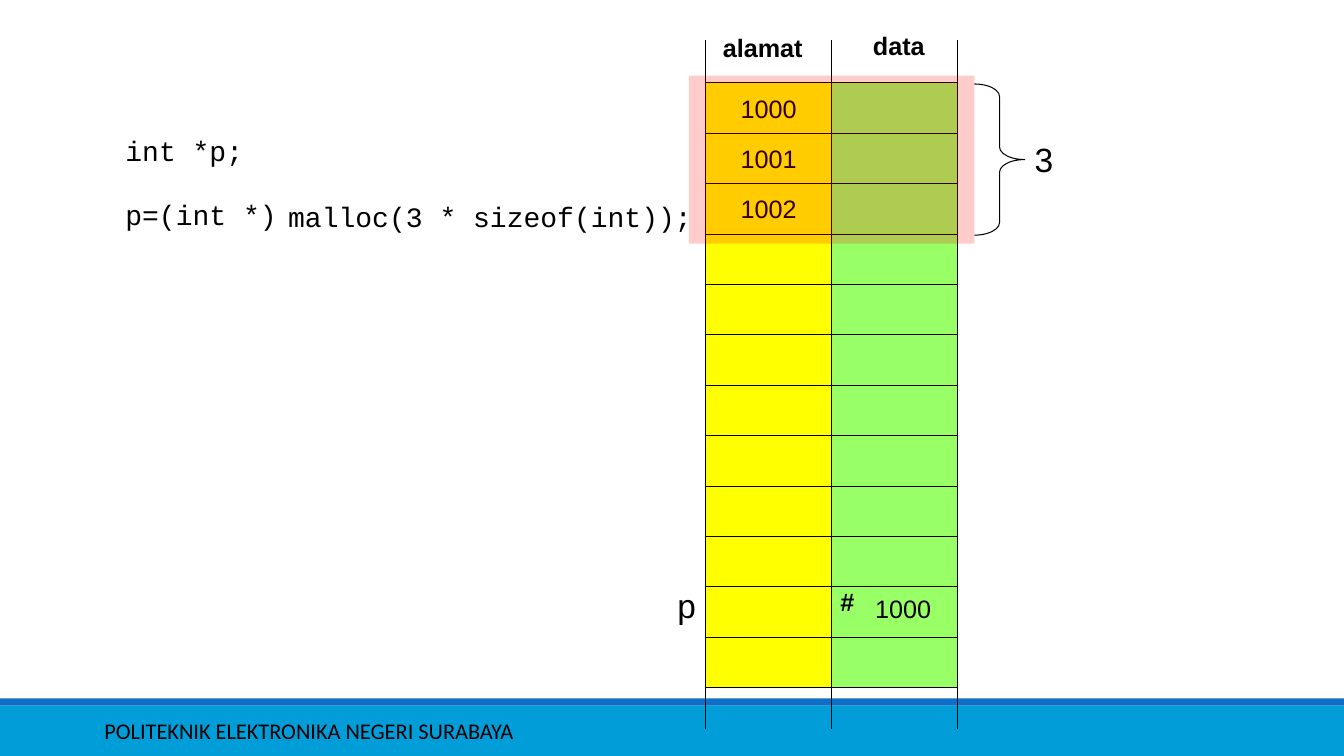
from dataclasses import dataclass

from lxml import etree
from pptx import Presentation
from pptx.dml.color import RGBColor
from pptx.enum.shapes import MSO_CONNECTOR as Connector, MSO_SHAPE as Shape
from pptx.enum.text import MSO_ANCHOR as Anchor, PP_ALIGN as Align
from pptx.oxml.ns import qn
from pptx.util import Emu, Pt


@dataclass(frozen=True)
class Theme:
    ink: str = "000000"
    address: str = "FFFF00"
    data: str = "99FF66"
    highlight: str = "FF0000"
    footer: str = "009DD9"
    stripe: str = "0F6FC6"
    sans: str = "Arial"
    mono: str = "Courier New"
    footer_font: str = "Calibri"
    footer_size: int = 16
    cell_size: int = 18
    code_size: int = 20
    label_size: int = 24
    line: float = 0.75


THEME = Theme()

# Content: memory addresses and text labels (text, box, font, size, bold)
ADDRESSES = ["1000", "1001", "1002"] + [""] * 9
FOOTER = "POLITEKNIK ELEKTRONIKA NEGERI SURABAYA"
HEADINGS = [
    ("alamat", (679, 26, 95, 38), THEME.sans, THEME.cell_size, True),
    ("data", (822, 24, 69, 38), THEME.sans, THEME.cell_size, True),
]
CODE_LABELS = [
    ("int *p;", (110, 122, 132, 42), THEME.mono, THEME.code_size, False),
    ("p", (635, 552, 38, 48), THEME.mono, THEME.label_size, False),
    ("#", (791, 554, 33, 38), THEME.sans, THEME.cell_size, True),
    ("malloc(3 * sizeof(int));", (265, 185, 407, 42), THEME.mono, THEME.code_size, False),
    ("3", (976, 128, 37, 48), THEME.sans, THEME.label_size, False),
]
FRONT_LABELS = [
    ("p=(int *)", (110, 183, 165, 42), THEME.mono, THEME.code_size, False),
    ("1000", (824, 560, 73, 38), THEME.sans, THEME.cell_size, False),
]

# Layout in px, 96 to the inch
PX = 9525
WIDTH, HEIGHT = 1280, 720
MEMORY_LEFT, MEMORY_TOP = 672, 79
COLUMN, ROW = 120, 48
RULE_TOPS = (38, 646)


def px(*lengths):
    return [Emu(length * PX) for length in lengths]


def color(value):
    return RGBColor.from_string(value)


def outline(line):
    line.color.rgb = color(THEME.ink)
    line.width = Pt(THEME.line)


def add_block(kind, box, fill=None, lined=False):
    shape = slide.shapes.add_shape(kind, *px(*box))
    shape.shadow.inherit = False
    if fill:
        shape.fill.solid()
        shape.fill.fore_color.rgb = color(fill)
    else:
        shape.fill.background()
    if lined:
        outline(shape.line)
    else:
        shape.line.fill.background()
    return shape


def write(shape, text, font, size, bold=False, wrap=False):
    frame = shape.text_frame
    frame.word_wrap = wrap
    frame.text = text
    style = frame.paragraphs[0].runs[0].font
    style.name, style.size, style.bold = font, Pt(size), bold
    style.color.rgb = color(THEME.ink)
    return frame


def add_label(text, box, font, size, bold=False, wrap=False):
    return write(slide.shapes.add_textbox(*px(*box)), text, font, size, bold, wrap)


def add_rule(x, top):
    rule = slide.shapes.add_connector(Connector.STRAIGHT, *px(x, top, x, top + ROW))
    outline(rule.line)
    etree.SubElement(rule._element.spPr, qn("a:effectLst"))


presentation = Presentation()
presentation.slide_width, presentation.slide_height = px(WIDTH, HEIGHT)
slide = presentation.slides.add_slide(presentation.slide_layouts[6])

# Footer band
add_block(Shape.RECTANGLE, (0, 672, WIDTH, 48), THEME.footer)
add_block(Shape.RECTANGLE, (0, 665, WIDTH, 7), THEME.stripe)
footer = add_label(FOOTER, (90, 677, 807, 38), THEME.footer_font, THEME.footer_size, wrap=True)
footer.vertical_anchor = Anchor.MIDDLE

# Memory cells: address and data columns
for row, address in enumerate(ADDRESSES):
    for column, fill in enumerate((THEME.address, THEME.data)):
        box = (MEMORY_LEFT + column * COLUMN, MEMORY_TOP + row * ROW, COLUMN, ROW)
        cell = add_block(Shape.RECTANGLE, box, fill, lined=True)
        if address and column == 0:
            frame = write(cell, address, THEME.sans, THEME.cell_size)
            frame.vertical_anchor = Anchor.MIDDLE
            frame.paragraphs[0].alignment = Align.CENTER

# Headings and the column rules running past the cells
for heading in HEADINGS:
    add_label(*heading)
for top in RULE_TOPS:
    for edge in range(3):
        add_rule(MEMORY_LEFT + edge * COLUMN, top)

# Code, brace and the highlighted allocation
for label in CODE_LABELS:
    add_label(*label)
brace = add_block(Shape.RIGHT_BRACE, (928, 80, 48, 3 * ROW), lined=True)
brace.adjustments[0], brace.adjustments[1] = 0.25, 0.5
highlight = add_block(Shape.RECTANGLE, (656, 72, 272, 160), THEME.highlight)
tint = highlight._element.spPr.find(qn("a:solidFill"))[0]
etree.SubElement(tint, qn("a:alpha"), val="20000")
for label in FRONT_LABELS:
    add_label(*label)

presentation.save("out.pptx")
